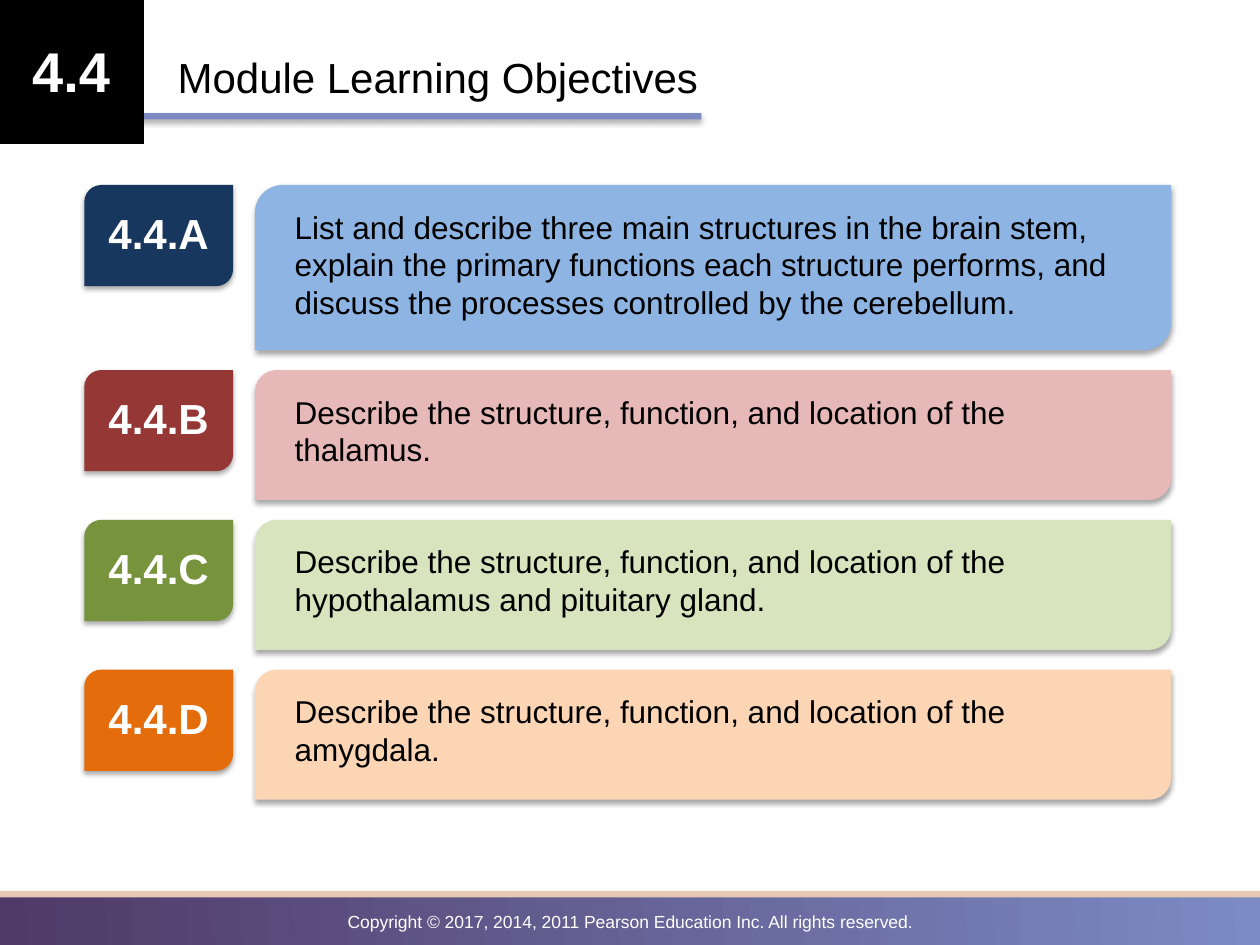
"""Build the learning objectives slide for module 4.4."""
from lxml import etree
from pptx import Presentation, util as u
from pptx.dml.color import RGBColor
from pptx.enum import shapes, text
from pptx.oxml.ns import qn

COLORS = {"black": "000000", "white": "FFFFFF", "plum": "4F3967",
          "periwinkle": "7C8BC4", "sand": "E7C8B3"}
MODULE, TITLE = "4.4", "Module Learning Objectives"
COPYRIGHT = "Copyright © 2017, 2014, 2011 Pearson Education Inc. All rights reserved."
OBJECTIVES = [
    ("4.4.A", "17375E", "8EB4E3", 3.33, 2.57,
     "List and describe three main structures in the brain stem, explain the "
     "primary functions each structure performs, and discuss the processes "
     "controlled by the cerebellum."),
    ("4.4.B", "953735", "E6B9B8", 2.62, 1.8,
     "Describe the structure, function, and location of the thalamus."),
    ("4.4.C", "77933C", "D7E4BD", 2.62, 1.8,
     "Describe the structure, function, and location of the hypothalamus and "
     "pituitary gland."),
    ("4.4.D", "E46C0A", "FCD5B5", 2.62, 1.8,
     "Describe the structure, function, and location of the amygdala."),
]
FIRST_TOP, ROW_GAP, TEXT_DROP = 3.73, 0.4, 0.33
RECT = shapes.MSO_SHAPE.RECTANGLE
CARD = shapes.MSO_SHAPE.ROUND_2_DIAG_RECTANGLE
LEFT, CENTER = text.PP_ALIGN.LEFT, text.PP_ALIGN.CENTER


def add_shadow(sp):
    effects = sp._element.spPr.find(qn("a:effectLst"))
    shadow = etree.SubElement(effects, qn("a:outerShdw"), blurRad="40000",
                              dist="23000", dir="5400000", rotWithShape="0")
    color = etree.SubElement(shadow, qn("a:srgbClr"), val=COLORS["black"])
    etree.SubElement(color, qn("a:alpha"), val="35000")


def add_block(s, kind, box, fill, shadow=False):
    sp = s.shapes.add_shape(kind, *map(u.Cm, box))
    sp.shadow.inherit = False
    sp.fill.solid()
    sp.fill.fore_color.rgb = RGBColor.from_string(fill)
    sp.line.fill.background()
    if shadow:
        add_shadow(sp)
    return sp


def add_label(s, box, words, size, color="black", bold=False, align=LEFT):
    tf = s.shapes.add_textbox(*map(u.Cm, box)).text_frame
    tf.word_wrap = True
    p = tf.paragraphs[0]
    p.alignment = align
    r = p.add_run()
    r.text = words
    for name, value in {"name": "Arial", "size": u.Pt(size), "bold": bold}.items():
        setattr(r.font, name, value)
    r.font.color.rgb = RGBColor.from_string(COLORS[color])


def add_footer(s):
    band = add_block(s, RECT, (0, 17.98, 25.4, 1.07), COLORS["plum"])
    band.fill.gradient()
    band.fill.gradient_angle = 4
    for stop, name in zip(band.fill.gradient_stops, ("plum", "periwinkle")):
        stop.color.rgb = RGBColor.from_string(COLORS[name])
    add_block(s, RECT, (0, 17.96, 25.4, 0.13), COLORS["sand"])
    add_label(s, (0, 18.24, 25.4, 0.69), COPYRIGHT, 10, "white", align=CENTER)


def add_header(s):
    add_block(s, RECT, (0, 2.28, 14.14, 0.13), COLORS["periwinkle"], True)
    add_block(s, RECT, (0, 0, 2.9, 2.9), COLORS["black"])
    add_label(s, (0, 0.62, 2.87, 1.62), MODULE, 32, "white", True, CENTER)
    add_label(s, (3.33, 0.92, 19.58, 1.28), TITLE, 24)


def add_objectives(s):
    top = FIRST_TOP
    for code, dark, light, height, text_height, words in OBJECTIVES:
        text_top = top + TEXT_DROP
        add_block(s, CARD, (1.7, top, 3, 2.04), dark, True)
        add_label(s, (1.7, text_top, 3, 1.28), code, 24, "white", True, CENTER)
        add_block(s, CARD, (5.14, top, 18.47, height), light, True)
        add_label(s, (5.69, text_top, 17.75, text_height), words, 18)
        top += height + ROW_GAP


def main():
    prs = Presentation()
    prs.slide_width, prs.slide_height = u.Cm(25.4), u.Cm(19.05)
    s = prs.slides.add_slide(prs.slide_layouts[6])
    add_footer(s)
    add_header(s)
    add_objectives(s)
    prs.save("out.pptx")


if __name__ == "__main__":
    main()
